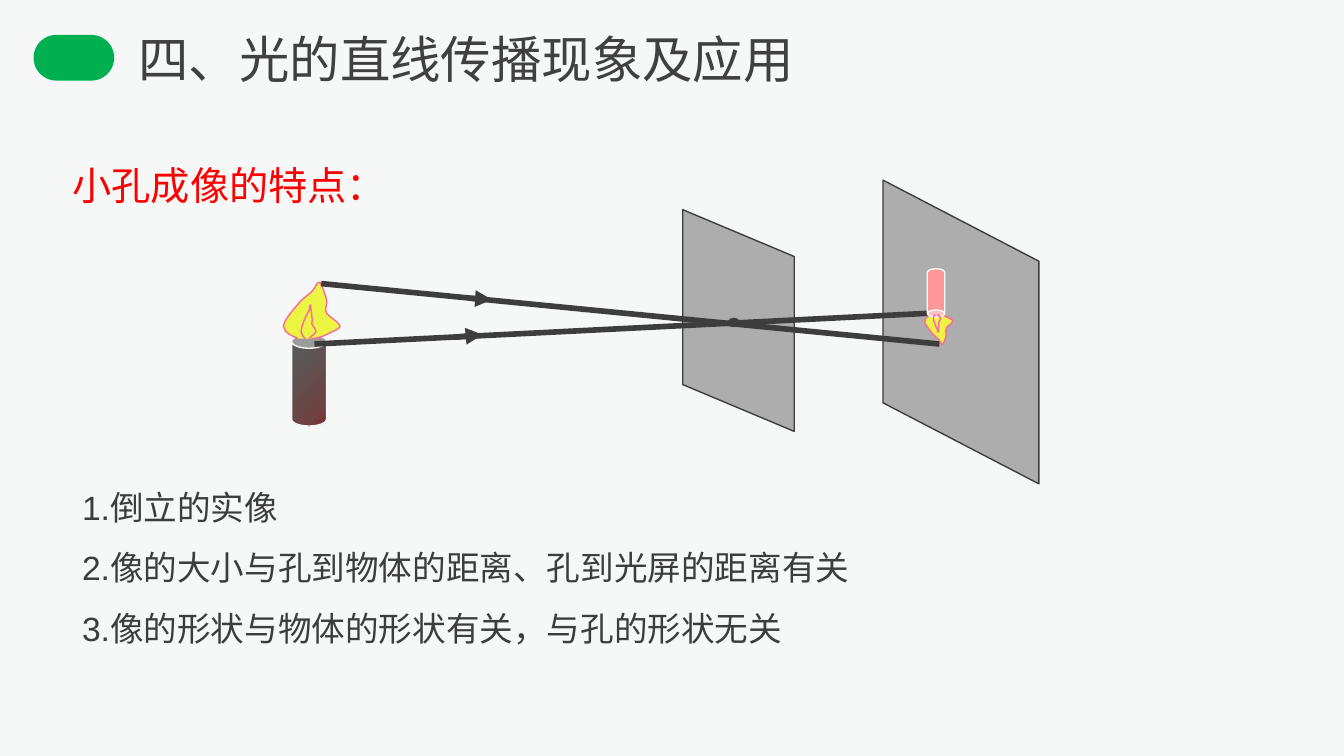
from copy import deepcopy
from dataclasses import dataclass
from typing import Optional

from lxml import etree
from pptx import Presentation
from pptx import util as u
from pptx.dml.color import RGBColor
from pptx.enum import shapes, text
from pptx.oxml.ns import qn

COLORS = {
    "background": "F6F8F8", "badge": "00B050", "title": "404040",
    "heading": "FF0000", "ink": "3D3D3D", "board": "ADADAD",
    "flame": "ECF444", "flame_edge": "FF6699", "image_candle": "FF9999",
    "candle_dark": "595959", "candle_mid": "6E4242", "candle_red": "832B2B",
}
PARALLELOGRAM = shapes.MSO_SHAPE.PARALLELOGRAM
CAN = shapes.MSO_SHAPE.CAN

FLAME_OUTER = [
    (0.11, 0), (0.06, 0.02), (0, 0.05), (0, 0.09), (0, 0.14), (0.07, 0.21), (0.11, 0.26),
    (0.14, 0.30), (0.19, 0.33), (0.21, 0.35), (0.24, 0.38), (0.25, 0.43), (0.27, 0.42),
    (0.28, 0.41), (0.31, 0.33), (0.32, 0.29), (0.33, 0.25), (0.30, 0.22), (0.32, 0.19),
    (0.34, 0.16), (0.42, 0.12), (0.42, 0.09), (0.42, 0.07), (0.35, 0.05), (0.32, 0.03),
    (0.28, 0.01), (0.23, 0), (0.21, 0),
]
FLAME_INNER = [
    (0.16, 0), (0.15, 0.01), (0.13, 0.03), (0.13, 0.05), (0.13, 0.08), (0.15, 0.13), (0.16, 0.15),
    (0.17, 0.18), (0.18, 0.19), (0.19, 0.21), (0.19, 0.23), (0.20, 0.26), (0.20, 0.25),
    (0.20, 0.24), (0.21, 0.19), (0.21, 0.17), (0.22, 0.15), (0.21, 0.13), (0.21, 0.11),
    (0.22, 0.09), (0.24, 0.07), (0.24, 0.05), (0.24, 0.04), (0.22, 0.03), (0.21, 0.02),
    (0.20, 0.01), (0.19, 0), (0.19, 0),
]


@dataclass
class Label:
    left: float
    top: float
    width: float
    height: float
    lines: list[str]
    size: int
    color: str
    spacing: Optional[float] = None


@dataclass
class Solid:
    kind: shapes.MSO_SHAPE
    left: float
    top: float
    width: float
    height: float
    fill: str
    line: Optional[str] = None
    adjust: Optional[float] = None
    rotation: int = 0


@dataclass
class Ray:
    start: tuple[float, float]
    end: tuple[float, float]
    arrow: bool = False


@dataclass
class Flame:
    left: float
    base: float
    scale_x: float
    scale_y: float


LABELS = [
    Label(0.47, 1.16, 3.93, 0.43, ["小孔成像的特点："], 21, "heading"),
    Label(0.54, 3.43, 9.35, 1.44, [
        "1.倒立的实像",
        "2.像的大小与孔到物体的距离、孔到光屏的距离有关",
        "3.像的形状与物体的形状有关，与孔的形状无关",
    ], 18, "ink", 1.5),
    Label(0.96, 0.17, 5.05, 0.53, ["四、光的直线传播现象及应用"], 27, "title"),
]
BADGE = Solid(shapes.MSO_SHAPE.ROUNDED_RECTANGLE, 0.25, 0.26, 0.6, 0.34, "badge", adjust=0.5)
BOARDS = [
    Solid(PARALLELOGRAM, 4.67, 1.97, 1.65, 0.83, "board", "ink", 0.42, 270),
    Solid(shapes.MSO_SHAPE.OVAL, 5.42, 2.37, 0.08, 0.06, "ink", "ink"),
    Solid(PARALLELOGRAM, 6.02, 1.89, 2.26, 1.16, "board", "ink", 0.52, 270),
]
CANDLE = Solid(CAN, 2.17, 2.49, 0.26, 0.68, "candle_dark", "background", 0.39)
CANDLE_STOPS = [(0, "candle_dark"), (0.17, "candle_dark"), (0.83, "candle_mid"), (1, "candle_red")]
IMAGE_CANDLE = Solid(CAN, 6.9, 2, 0.13, 0.36, "image_candle", "background", 0.41)
RAYS = [
    Ray((2.34, 2.56), (6.93, 2.33)),
    Ray((3.38, 2.51), (3.59, 2.49), True),
    Ray((2.39, 2.11), (6.99, 2.56)),
    Ray((3.5, 2.22), (3.66, 2.23), True),
]
FLAME = Flame(2.11, 2.52, 1, -1)
IMAGE_FLAME = Flame(6.88, 2.34, 0.5, 0.53)


def rgb(name: str) -> RGBColor:
    """Look up a named colour."""
    return RGBColor.from_string(COLORS[name])


def style(shape, fill: Optional[str], line: Optional[str]) -> None:
    """Set fill and outline, and remove the shadow."""
    shape.shadow.inherit = False
    if fill:
        shape.fill.solid()
        shape.fill.fore_color.rgb = rgb(fill)
    else:
        shape.fill.background()
    if line:
        shape.line.color.rgb = rgb(line)
        shape.line.width = u.Pt(0.75)
    else:
        shape.line.fill.background()


def add_label(slide, label: Label) -> None:
    """Draw a text box with one paragraph per line."""
    box = [u.Inches(v) for v in (label.left, label.top, label.width, label.height)]
    frame = slide.shapes.add_textbox(*box).text_frame
    frame.word_wrap = True
    frame.auto_size = text.MSO_AUTO_SIZE.SHAPE_TO_FIT_TEXT
    frame.margin_left = frame.margin_right = u.Inches(0.07)
    frame.margin_top = frame.margin_bottom = u.Inches(0.04)
    frame.text = "\n".join(label.lines)
    for paragraph in frame.paragraphs:
        paragraph.line_spacing = label.spacing
        paragraph.font.name = "Arial"
        paragraph.font.size = u.Pt(label.size)
        paragraph.font.color.rgb = rgb(label.color)


def add_solid(slide, solid: Solid):
    """Draw a preset shape."""
    box = [u.Inches(v) for v in (solid.left, solid.top, solid.width, solid.height)]
    shape = slide.shapes.add_shape(solid.kind, *box)
    style(shape, solid.fill, solid.line)
    if solid.adjust is not None:
        shape.adjustments[0] = solid.adjust
    shape.rotation = solid.rotation
    return shape


def shade(shape, stops: list[tuple[float, str]]) -> None:
    """Fill a shape with a diagonal gradient."""
    shape.fill.gradient()
    shape.fill.gradient_angle = 315
    stop_list = next(shape._element.iter(qn("a:gsLst")))
    for _ in stops[2:]:
        stop_list.append(deepcopy(stop_list[0]))
    for stop, (position, color) in zip(shape.fill.gradient_stops, stops):
        stop.position = position
        stop.color.rgb = rgb(color)


def add_ray(slide, ray: Ray) -> None:
    """Draw a light ray, with an arrowhead where asked."""
    points = [u.Inches(v) for v in (*ray.start, *ray.end)]
    connector = slide.shapes.add_connector(shapes.MSO_CONNECTOR.STRAIGHT, *points)
    connector.line.color.rgb = rgb("ink")
    connector.line.width = u.Pt(3)
    if ray.arrow:
        etree.SubElement(connector.line._get_or_add_ln(), qn("a:tailEnd"), type="triangle")
    etree.SubElement(connector._element.spPr, qn("a:effectLst"))


def add_curve(slide, flame: Flame, outline: list, fill: Optional[str] = None) -> None:
    """Draw an open flame outline as cubic curves."""
    points = [(u.Inches(flame.left + x * flame.scale_x), u.Inches(flame.base + y * flame.scale_y))
              for x, y in outline]
    builder = slide.shapes.build_freeform(*points[0])
    builder.add_line_segments(points[1:], close=False)
    shape = builder.convert_to_shape()
    segments = list(shape._element.iter(qn("a:lnTo")))
    for i in range(0, len(segments), 3):
        curve = etree.SubElement(segments[i].getparent(), qn("a:cubicBezTo"))
        for segment in segments[i:i + 3]:
            curve.append(segment[0])
            segment.getparent().remove(segment)
    style(shape, fill, "flame_edge")


def main() -> None:
    """Build the pinhole imaging slide."""
    presentation = Presentation()
    presentation.slide_width = u.Inches(10)
    presentation.slide_height = presentation.slide_width * 9 // 16
    slide = presentation.slides.add_slide(presentation.slide_layouts[6])
    slide.background.fill.solid()
    slide.background.fill.fore_color.rgb = rgb("background")
    add_solid(slide, BADGE)
    for label in LABELS:
        add_label(slide, label)
    for board in BOARDS:
        add_solid(slide, board)
    shade(add_solid(slide, CANDLE), CANDLE_STOPS)
    add_curve(slide, FLAME, FLAME_OUTER, "flame")
    add_curve(slide, FLAME, FLAME_INNER)
    for ray in RAYS:
        add_ray(slide, ray)
    add_curve(slide, IMAGE_FLAME, FLAME_OUTER, "flame")
    add_solid(slide, IMAGE_CANDLE)._element.spPr.xfrm.set("flipV", "1")
    add_curve(slide, IMAGE_FLAME, FLAME_INNER)
    presentation.save("out.pptx")


if __name__ == "__main__":
    main()
